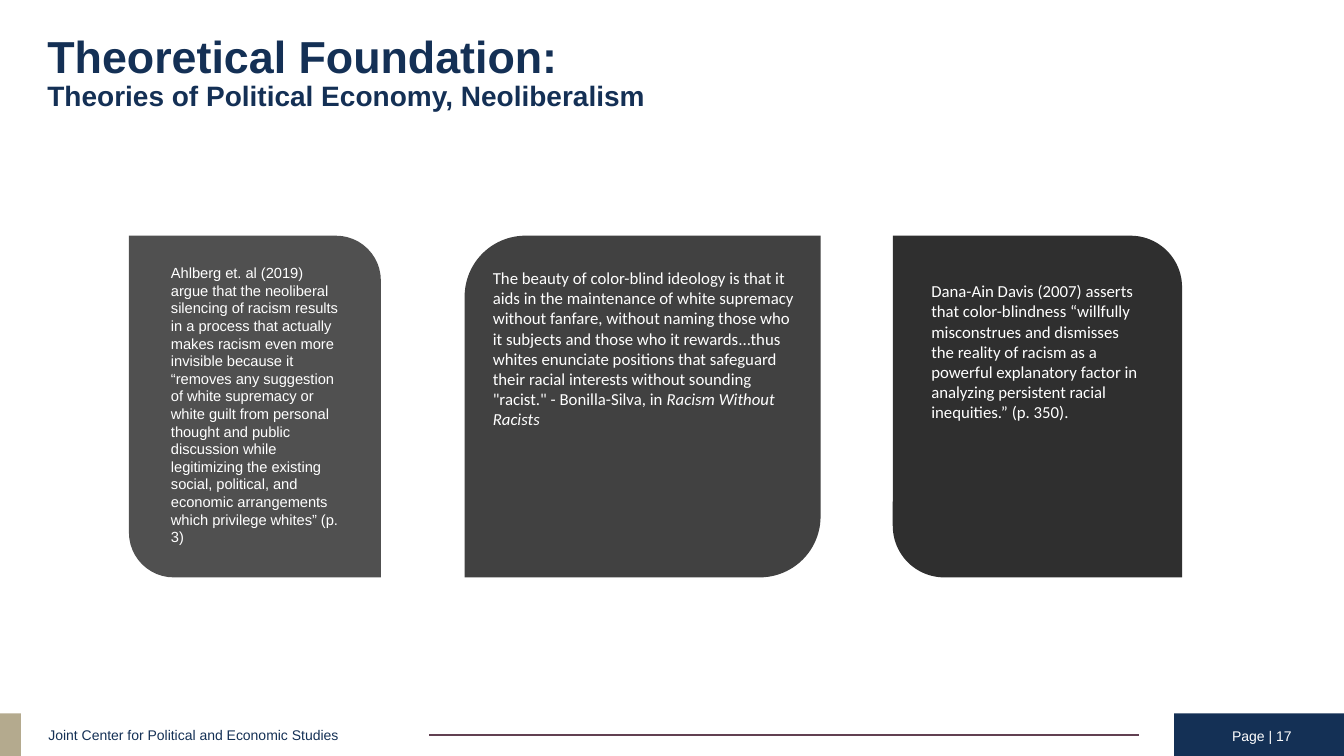
"""Build a slide with three rounded quotation cards and a footer band."""
import pptx
import pptx.util
import pptx.dml.color
import pptx.enum.shapes
import pptx.enum.text
import pptx.oxml.ns
import lxml.etree

Cm, Pt = pptx.util.Cm, pptx.util.Pt
RGBColor = pptx.dml.color.RGBColor
SHAPE = pptx.enum.shapes.MSO_SHAPE
ALIGN = pptx.enum.text.PP_ALIGN
ANCHOR = pptx.enum.text.MSO_ANCHOR

NAVY = RGBColor(0x14, 0x30, 0x55)
TAN = RGBColor(0xB4, 0xAA, 0x8E)
PLUM = RGBColor(0x61, 0x40, 0x51)
WHITE = RGBColor(0xFF, 0xFF, 0xFF)
GREYS = [RGBColor(v, v, v) for v in (0x50, 0x41, 0x2F)]

BAND_TOP, BAND_HEIGHT = 17.98, 1.07
CARD_TOP, CARD_HEIGHT, CARD_ROUNDING = 5.94, 8.61, 0.178

CARDS = [
    dict(left=3.25, width=6.35, corners=(0, CARD_ROUNDING),
         box=(4.06, 6.4, 4.75, 2.82), size=10.5, font="Arial", title="",
         text="Ahlberg et. al (2019) argue that the neoliberal silencing of "
              "racism results in a process that actually makes racism even more "
              "invisible because it “removes any suggestion of white supremacy "
              "or white guilt from personal thought and public discussion while "
              "legitimizing the existing social, political, and economic "
              "arrangements which privilege whites” (p. 3)"),
    dict(left=11.71, width=8.97, corners=(CARD_ROUNDING, 0),
         box=(12.17, 6.5, 8.18, 2.49), size=12, font="Calibri",
         title="Racism Without Racists",
         text="The beauty of color-blind ideology is that it aids in the "
              "maintenance of white supremacy without fanfare, without naming "
              "those who it subjects and those who it rewards...thus whites "
              "enunciate positions that safeguard their racial interests without "
              "sounding \"racist.\" - Bonilla-Silva, in "),
    dict(left=22.5, width=7.29, corners=(0, CARD_ROUNDING),
         box=(23.22, 6.83, 5.87, 2.82), size=12, font="Calibri", title="",
         text="Dana-Ain Davis (2007) asserts that color-blindness “willfully "
              "misconstrues and dismisses the reality of racism as a powerful "
              "explanatory factor in analyzing persistent racial inequities.” "
              "(p. 350)."),
]


def add_text(p, text, size=10, font="Arial", color=WHITE, bold=False, italic=False):
    """Add a formatted run to a paragraph."""
    r = p.add_run()
    r.text = text
    r.font.size, r.font.name = Pt(size), font
    r.font.bold, r.font.italic = bold, italic
    r.font.color.rgb = color


def add_box(shapes, left, top, width, height, inset=0.13, anchor=ANCHOR.TOP):
    """Add a wrapping text box and return its first paragraph."""
    tf = shapes.add_textbox(Cm(left), Cm(top), Cm(width), Cm(height)).text_frame
    tf.word_wrap = True
    tf.margin_left = tf.margin_right = Cm(0.25)
    tf.margin_top = tf.margin_bottom = Cm(inset)
    tf.vertical_anchor = anchor
    return tf.paragraphs[0]


def add_block(shapes, kind, left, top, width, height, fill):
    """Add a flat filled shape without outline."""
    sp = shapes.add_shape(kind, Cm(left), Cm(top), Cm(width), Cm(height))
    sp.shadow.inherit = False
    sp.fill.solid()
    sp.fill.fore_color.rgb = fill
    sp.line.fill.background()
    return sp


def add_title(s):
    """Place the two-line heading in the title placeholder."""
    sp = s.shapes.title
    sp.left, sp.top, sp.width, sp.height = Cm(0.94), Cm(1.07), Cm(24.46), Cm(1.57)
    tf = sp.text_frame
    tf.auto_size = pptx.enum.text.MSO_AUTO_SIZE.NONE
    tf.vertical_anchor = ANCHOR.MIDDLE
    lines = [("Theoretical Foundation:", 32),
             ("Theories of Political Economy, Neoliberalism", 20)]
    for i, (text, size) in enumerate(lines):
        p = tf.add_paragraph() if i else tf.paragraphs[0]
        p.alignment, p.line_spacing = ALIGN.LEFT, 0.9
        add_text(p, text, size=size, color=NAVY, bold=True)


def add_card(s, card, fill):
    """Add a card with two rounded corners and its quotation, grouped."""
    shapes = s.shapes.add_group_shape().shapes
    sp = add_block(shapes, SHAPE.ROUND_2_DIAG_RECTANGLE, card["left"], CARD_TOP,
                   card["width"], CARD_HEIGHT, fill)
    for i, rounding in enumerate(card["corners"]):
        sp.adjustments[i] = rounding
    p = add_box(shapes, *card["box"], inset=0.25)
    style = dict(size=card["size"], font=card["font"])
    add_text(p, card["text"], **style)
    if card["title"]:
        add_text(p, card["title"], italic=True, **style)


def add_rule(s, left, right, y):
    """Add the thin horizontal footer rule."""
    line = s.shapes.add_connector(pptx.enum.shapes.MSO_CONNECTOR.STRAIGHT,
                                  Cm(left), Cm(y), Cm(right), Cm(y))
    line.line.color.rgb, line.line.width = PLUM, Pt(1)
    lxml.etree.SubElement(line._element.spPr, pptx.oxml.ns.qn("a:effectLst"))


def add_footer(s):
    """Add the footer blocks, rule, organisation and page number."""
    for left, width, fill in ((29.59, 4.28, NAVY), (0, 0.53, TAN)):
        add_block(s.shapes, SHAPE.RECTANGLE, left, BAND_TOP, width, BAND_HEIGHT, fill)
    p = add_box(s.shapes, 0.97, 18.19, 8.89, 0.69)
    add_text(p, "Joint Center for Political and Economic Studies", color=NAVY)
    add_rule(s, 10.82, 28.7, 18.52)
    p = add_box(s.shapes, 29.57, 18.03, 3.23, 1.02, anchor=ANCHOR.MIDDLE)
    p.alignment = ALIGN.RIGHT
    add_text(p, "Page | 17")


def main():
    """Assemble and save the slide."""
    prs = pptx.Presentation()
    prs.slide_width, prs.slide_height = Cm(33.87), Cm(19.05)
    s = prs.slides.add_slide(prs.slide_layouts[5])
    add_footer(s)
    add_title(s)
    for card, fill in zip(CARDS, GREYS):
        add_card(s, card, fill)
    prs.save("out.pptx")


if __name__ == "__main__":
    main()
